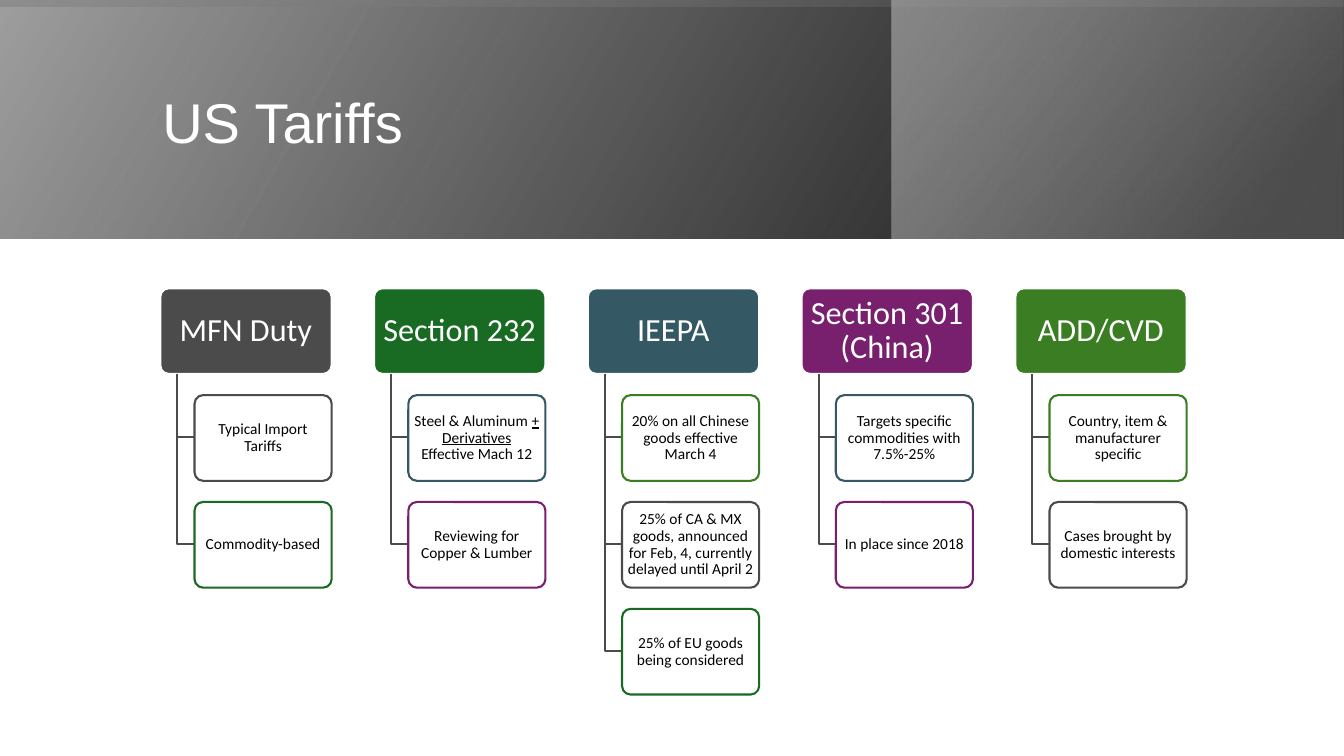
from lxml import etree
from pptx import Presentation
from pptx import util as u
from pptx.dml.color import RGBColor
from pptx.enum import shapes, text
from pptx.oxml import ns

PX = 9144  # EMU per px, 100 px to the inch

WHITE = RGBColor(0xFF, 0xFF, 0xFF)
BLACK = RGBColor(0x00, 0x00, 0x00)
GRAY = RGBColor(0x4B, 0x4B, 0x4B)
GREEN = RGBColor(0x19, 0x6B, 0x24)
TEAL = RGBColor(0x34, 0x59, 0x64)
PURPLE = RGBColor(0x78, 0x20, 0x6E)
LIME = RGBColor(0x3A, 0x7D, 0x22)
SILVER = RGBColor(0x9E, 0x9E, 0x9E)
MID_GRAY = RGBColor(0x6A, 0x6A, 0x6A)
PALE_GRAY = RGBColor(0xD3, 0xD3, 0xD3)

# Tree layout in px
FIRST_LEFT, COLUMN_STEP = 159, 212
HEADER_TOP, ROW_STEP = 286, 106
HEADER_WIDTH, BOX_WIDTH, BOX_HEIGHT = 170, 136, 85
TRUNK_INDENT, BOX_INDENT = 17, 34
FIRST_BOX_TOP = 392

# Heading, heading colour, then (outline colour, runs); a run is (words, underlined)
TARIFFS = [
    ("MFN Duty", GRAY, [
        (GRAY, [("Typical Import Tariffs", False)]),
        (GREEN, [("Commodity-based", False)])]),
    ("Section 232", GREEN, [
        (TEAL, [("Steel & Aluminum ", False), ("+ Derivatives", True),
                ("\vEffective Mach 12", False)]),
        (PURPLE, [("Reviewing for Copper & Lumber", False)])]),
    ("IEEPA", TEAL, [
        (LIME, [("20% on all Chinese goods effective March 4", False)]),
        (GRAY, [("25% of CA & MX goods, announced for Feb, 4, "
                 "currently delayed until April 2", False)]),
        (GREEN, [("25% of EU goods being considered", False)])]),
    ("Section 301 (China)", PURPLE, [
        (TEAL, [("Targets specific commodities with 7.5%-25%", False)]),
        (PURPLE, [("In place since 2018", False)])]),
    ("ADD/CVD", LIME, [
        (LIME, [("Country, item & manufacturer specific", False)]),
        (GRAY, [("Cases brought by domestic interests", False)])]),
]


def px(*lengths):
    return [u.Emu(length * PX) for length in lengths]


def write(shape, runs, size, color, font="Calibri", align=text.PP_ALIGN.CENTER,
          margins=(10, 5)):
    """Fill a shape with one paragraph of formatted runs."""
    frame = shape.text_frame
    frame.word_wrap = True
    frame.auto_size = text.MSO_AUTO_SIZE.NONE
    frame.vertical_anchor = text.MSO_ANCHOR.MIDDLE
    frame.margin_left, frame.margin_top = px(*margins)
    frame.margin_right, frame.margin_bottom = px(*margins)
    para = frame.paragraphs[0]
    para.alignment = align
    para.line_spacing = 0.9
    for words, underlined in runs:
        for index, line in enumerate(words.split("\v")):
            if index:
                para.add_line_break()
            if not line:
                continue
            span = para.add_run()
            span.text = line
            span.font.name = font
            span.font.size = u.Pt(size)
            span.font.color.rgb = color
            if underlined:
                span.font.underline = True


def add_gradient(page, left, top, width, height, angle, stops, rotation=0):
    """Add a mirrored band; each stop is (position, colour, opacity in percent)."""
    band = page.shapes.add_shape(shapes.MSO_SHAPE.RECTANGLE,
                                 *px(left, top, width, height))
    band.shadow.inherit = False
    band.line.fill.background()
    band.rotation = rotation
    band.element.spPr.find(ns.qn("a:xfrm")).set("flipH", "1")
    band.fill.gradient()
    band.fill.gradient_angle = angle
    for stop, (position, color, opacity) in zip(band.fill.gradient_stops, stops):
        stop.position = position
        stop.color.rgb = color
    colors = band.element.spPr.iter(ns.qn("a:srgbClr"))
    for node, (_, _, opacity) in zip(list(colors), stops):
        etree.SubElement(node, ns.qn("a:alpha")).set("val", str(opacity * 1000))


def add_box(page, left, top, width, fill, outline):
    box = page.shapes.add_shape(shapes.MSO_SHAPE.ROUNDED_RECTANGLE,
                                *px(left, top, width, BOX_HEIGHT))
    box.adjustments[0] = 0.1
    box.shadow.inherit = False
    box.fill.solid()
    box.fill.fore_color.rgb = fill
    box.line.color.rgb = outline
    box.line.width = u.Pt(1.5)
    return box


def add_branch(page, left, top, right, bottom):
    builder = page.shapes.build_freeform(left, top, scale=PX)
    builder.add_line_segments([(left, bottom), (right, bottom)], close=False)
    branch = builder.convert_to_shape()
    branch.shadow.inherit = False
    branch.fill.background()
    branch.line.color.rgb = GRAY
    branch.line.width = u.Pt(1.5)


def add_column(page, left, heading, color, details):
    header = add_box(page, left, HEADER_TOP, HEADER_WIDTH, color, WHITE)
    write(header, [(heading, False)], 23, WHITE, margins=(5, 3))
    for row, (outline, runs) in enumerate(details):
        top = FIRST_BOX_TOP + row * ROW_STEP
        add_branch(page, left + TRUNK_INDENT, HEADER_TOP + BOX_HEIGHT,
                   left + BOX_INDENT, top + BOX_HEIGHT // 2)
        box = add_box(page, left + BOX_INDENT, top, BOX_WIDTH, WHITE, outline)
        write(box, runs, 11, BLACK, margins=(2, 2))


def add_title(page, words):
    title = page.shapes.title
    title.left, title.top, title.width, title.height = px(151, 38, 1063, 172)
    write(title, [(words, False)], 40, WHITE, font="Arial",
          align=text.PP_ALIGN.LEFT)
    page.shapes.element.append(title.element)  # bring in front of the banner


def main():
    deck = Presentation()
    deck.slide_width, deck.slide_height = u.Inches(13.33), u.Inches(7.5)
    page = deck.slides.add_slide(deck.slide_layouts[5])

    # Banner
    add_gradient(page, 0, 0, 1333, 237, 30,
                 [(0, BLACK, 96), (1, SILVER, 100)])
    add_gradient(page, 884, 0, 448, 237, 40,
                 [(0.19, MID_GRAY, 68), (1, PALE_GRAY, 48)])
    add_gradient(page, 548, -548, 237, 1333, 10,
                 [(0.23, SILVER, 16), (0.99, BLACK, 45)], rotation=270)
    add_title(page, "US Tariffs")

    # Tariff columns
    for column, tariff in enumerate(TARIFFS):
        add_column(page, FIRST_LEFT + column * COLUMN_STEP, *tariff)

    deck.save("out.pptx")


if __name__ == "__main__":
    main()
